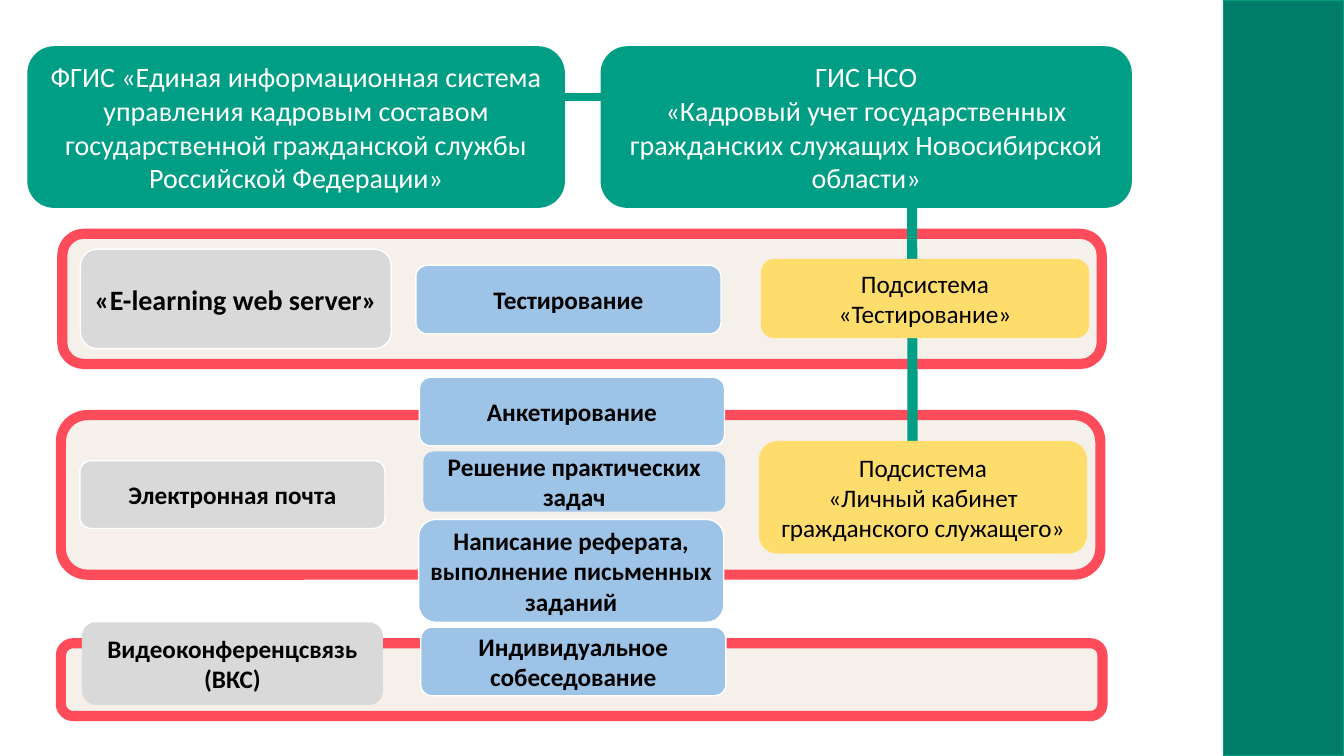
from lxml import etree
from pptx import Presentation
from pptx.dml.color import RGBColor
from pptx.enum import shapes as sh, text as tx
from pptx.oxml import ns
from pptx.util import Pt

GREEN = RGBColor(0x00, 0x9E, 0x84)
DARK = RGBColor(0x00, 0x7D, 0x69)
RED = RGBColor(0xFF, 0x4C, 0x5B)
CREAM = RGBColor(0xF6, 0xF0, 0xEA)
GRAY = RGBColor(0xD9, 0xD9, 0xD9)
BLUE = RGBColor(0x9D, 0xC3, 0xE6)
YELLOW = RGBColor(0xFF, 0xDD, 0x6C)
WHITE = RGBColor(0xFF, 0xFF, 0xFF)
BLACK = RGBColor(0x00, 0x00, 0x00)


class Sketch:
    font = "Calibri"

    def __init__(self, slide):
        self.slide = slide

    def box(self, area, fill, edge=None, width=1, kind=sh.MSO_SHAPE.ROUNDED_RECTANGLE):
        shape = self.slide.shapes.add_shape(kind, *map(Pt, area))
        shape.shadow.inherit = False
        shape.fill.solid()
        shape.fill.fore_color.rgb = fill
        if edge is None:
            shape.line.fill.background()
        else:
            shape.line.color.rgb = edge
            shape.line.width = Pt(width)
        return shape

    def label(self, shape, lines, size=18, color=BLACK, bold=False, pad=(7.2, 3.6)):
        frame = shape.text_frame
        frame.word_wrap = True
        frame.vertical_anchor = tx.MSO_ANCHOR.MIDDLE
        frame.margin_left = frame.margin_right = Pt(pad[0])
        frame.margin_top = frame.margin_bottom = Pt(pad[1])
        frame.text = "\n".join(lines)
        for para in frame.paragraphs:
            para.alignment = tx.PP_ALIGN.CENTER
            para.font.name = self.font
            para.font.size = Pt(size)
            para.font.bold = bold
            para.font.color.rgb = color

    def link(self, ends, width):
        line = self.slide.shapes.add_connector(
            sh.MSO_CONNECTOR.STRAIGHT, *map(Pt, ends))
        line.line.color.rgb = GREEN
        line.line.width = Pt(width)
        etree.SubElement(line._element.spPr, ns.qn("a:effectLst"))


def main():
    deck = Presentation()
    deck.slide_width, deck.slide_height = Pt(960), Pt(540)
    art = Sketch(deck.slides.add_slide(deck.slide_layouts[6]))

    # Side band
    art.box((874, 0, 86, 540), DARK, GREEN, kind=sh.MSO_SHAPE.RECTANGLE)

    # Framed rows
    for area in ((43.5, 459.5, 744, 52), (44.5, 167, 742.5, 93),
                 (43.5, 296.5, 742.5, 114)):
        art.box(area, CREAM, RED, 7.25)

    # Links between systems
    art.link((232.5, 69.5, 558.5, 69.5), 5.75)
    art.link((651.5, 142, 652, 395), 7.25)

    # State systems
    for area, lines in (
        ((19.5, 33, 384, 115.5),
         ["ФГИС «Единая информационная система управления кадровым составом "
          "государственной гражданской службы Российской Федерации»"]),
        ((429, 33, 379.5, 115.5),
         ["ГИС НСО", "«Кадровый учет государственных гражданских служащих "
          "Новосибирской области»"]),
    ):
        art.label(art.box(area, GREEN), lines, 20, WHITE)

    # Subsystems
    for area, lines in (
        ((543.5, 185, 234.5, 56.5), ["Подсистема «Тестирование»"]),
        ((542, 315, 234.5, 80.5),
         ["Подсистема", "«Личный кабинет гражданского служащего»"]),
    ):
        art.label(art.box(area, YELLOW), lines)

    # Tools in gray, methods in blue
    for area, fill, edge, size, line in (
        ((57.5, 178, 222, 71), GRAY, WHITE, 20, "«E-learning web server»"),
        ((57, 329, 218, 48.5), GRAY, WHITE, 18, "Электронная почта"),
        ((58.5, 444.5, 215, 59), GRAY, None, 18, "Видеоконференцсвязь (ВКС)"),
        ((297, 189.5, 218, 49), BLUE, WHITE, 18, "Тестирование"),
        ((299.5, 269.5, 218, 49), BLUE, WHITE, 18, "Анкетирование"),
        ((302.5, 322.5, 215.5, 43), BLUE, None, 18, "Решение практических задач"),
        ((299, 371, 218, 73.5), BLUE, WHITE, 18,
         "Написание реферата, выполнение письменных заданий"),
        ((300.5, 448, 218, 49), BLUE, WHITE, 18, "Индивидуальное собеседование"),
    ):
        art.label(art.box(area, fill, edge), [line], size, bold=True, pad=(1, 1))

    deck.save("out.pptx")


if __name__ == "__main__":
    main()
